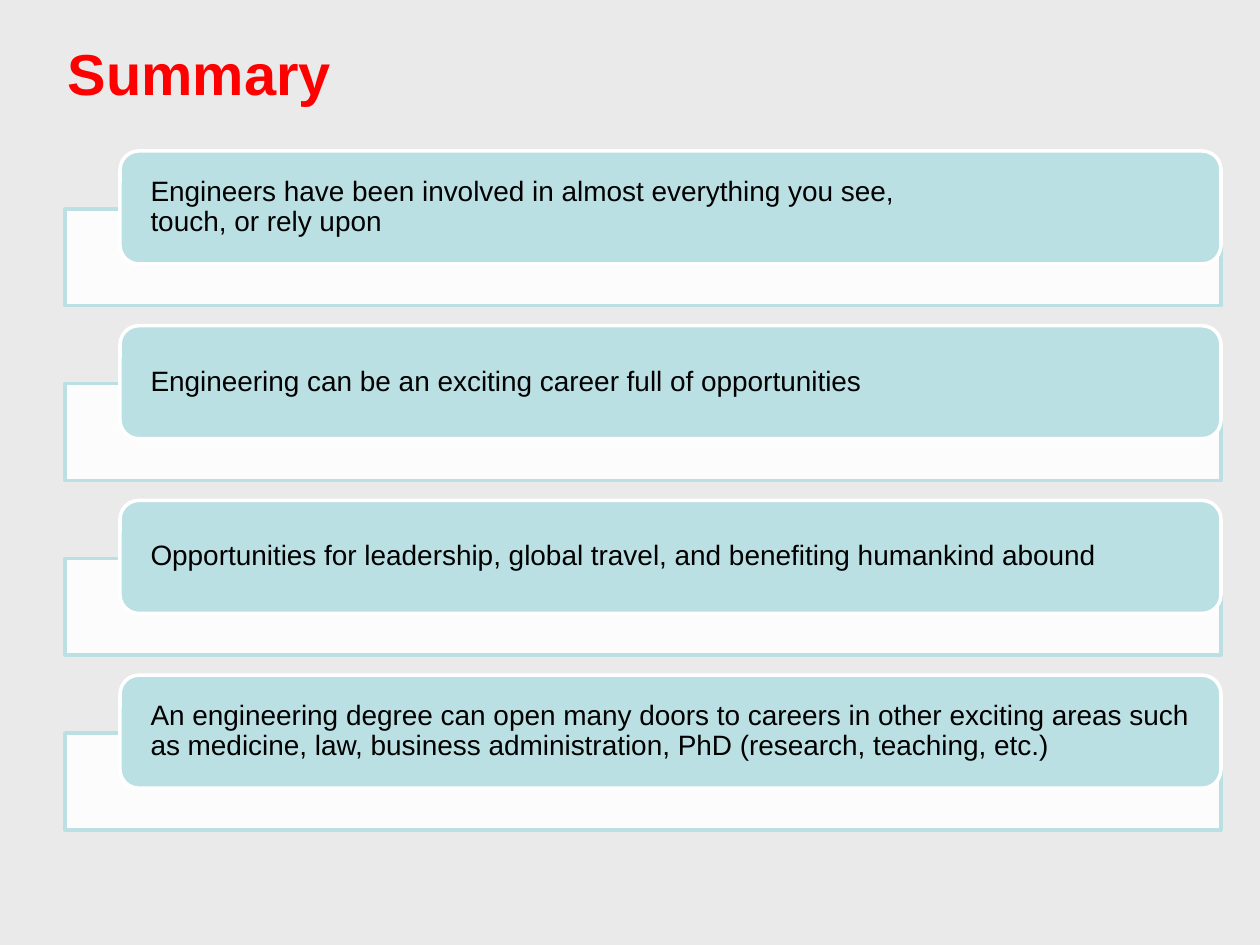
from lxml.etree import SubElement
from pptx import Presentation
from pptx.dml.color import RGBColor
from pptx.enum.shapes import MSO_SHAPE
from pptx.enum.text import MSO_ANCHOR, MSO_AUTO_SIZE, PP_ALIGN
from pptx.oxml.ns import qn
from pptx.util import Emu, Pt

COLORS = {
    "background": "EAEAEA",
    "heading": "FF0000",
    "card": "BBE0E3",
    "white": "FFFFFF",
    "body": "000000",
}
POINTS = [
    "Engineers have been involved in almost everything you see,\ntouch, or rely upon",
    "Engineering can be an exciting career full of opportunities",
    "Opportunities for leadership, global travel, and benefiting humankind abound",
    "An engineering degree can open many doors to careers in other exciting areas such "
    "as medicine, law, business administration, PhD (research, teaching, etc.)",
]


def px(length):
    """Turn px into EMU."""
    return Emu(round(length * 914400 / 126))


def color(name):
    """Look up a named colour."""
    return RGBColor.from_string(COLORS[name])


def write(shape, text, *, size, ink, bold=False, align=PP_ALIGN.LEFT,
          anchor=MSO_ANCHOR.MIDDLE, margins=(13, 6), spacing=1.0, wrap=True):
    """Write one formatted paragraph into a shape."""
    frame = shape.text_frame
    frame.word_wrap = wrap
    frame.vertical_anchor = anchor
    frame.margin_left = frame.margin_right = px(margins[0])
    frame.margin_top = frame.margin_bottom = px(margins[1])
    paragraph = frame.paragraphs[0]
    paragraph.text = text
    paragraph.alignment = align
    paragraph.line_spacing = spacing
    for run in paragraph.runs:
        run.font.name = "Arial"
        run.font.size = Pt(size)
        run.font.bold = bold
        run.font.color.rgb = color(ink)


def add_panel(slide, kind, box, fill, line, opacity=100):
    """Add a filled and outlined shape."""
    panel = slide.shapes.add_shape(kind, *map(px, box))
    panel.shadow.inherit = False
    panel.fill.solid()
    panel.fill.fore_color.rgb = color(fill)
    panel.line.color.rgb = color(line)
    panel.line.width = Pt(2)
    if opacity < 100:
        tint = panel.fill._xPr.find(qn("a:solidFill"))[0]
        SubElement(tint, qn("a:alpha")).set("val", str(opacity * 1000))
    return panel


def add_heading(slide, text, box):
    """Place and format the title placeholder."""
    heading = slide.shapes.title
    heading.left, heading.top, heading.width, heading.height = map(px, box)
    write(heading, text, size=33, ink="heading", bold=True, align=PP_ALIGN.CENTER,
          anchor=MSO_ANCHOR.TOP, wrap=False)
    heading.text_frame.auto_size = MSO_AUTO_SIZE.SHAPE_TO_FIT_TEXT


def add_point(slide, text, box):
    """Add a card overlapping its backing bar."""
    left, top, width, height = box
    bar_height, card_height, indent = 97, 113, 55
    add_panel(slide, MSO_SHAPE.RECTANGLE,
              (left, top + height - bar_height, width, bar_height),
              "white", "card", opacity=90)
    card = add_panel(slide, MSO_SHAPE.ROUNDED_RECTANGLE,
                     (left + indent, top, width - indent, card_height),
                     "card", "white")
    write(card, text, size=16, ink="body", margins=(25, 0), spacing=0.9)


def add_points(slide, points, box):
    """Stack the points evenly in a box."""
    left, top, width, height = box
    gap = 20
    row_height = (height + gap) / len(points) - gap
    for index, text in enumerate(points):
        add_point(slide, text,
                  (left, top + index * (row_height + gap), width, row_height))


def main():
    """Build the summary slide."""
    deck = Presentation()
    deck.slide_width, deck.slide_height = px(1260), px(945)
    slide = deck.slides.add_slide(deck.slide_layouts[5])
    slide.background.fill.solid()
    slide.background.fill.fore_color.rgb = color("background")
    add_heading(slide, "Summary", (54, 32, 291, 83))
    add_points(slide, POINTS, (65, 151, 1156, 679))
    deck.save("out.pptx")


if __name__ == "__main__":
    main()
